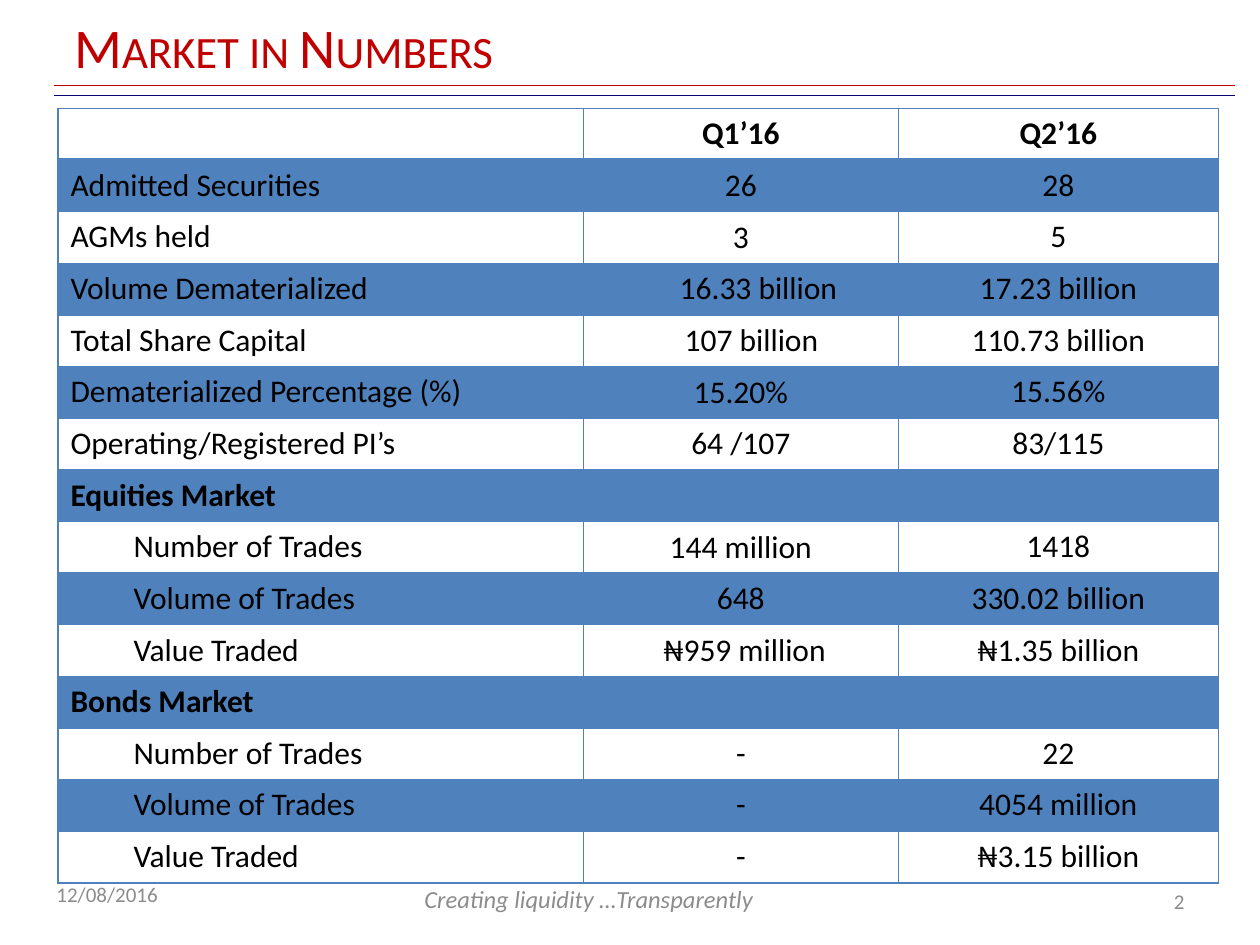
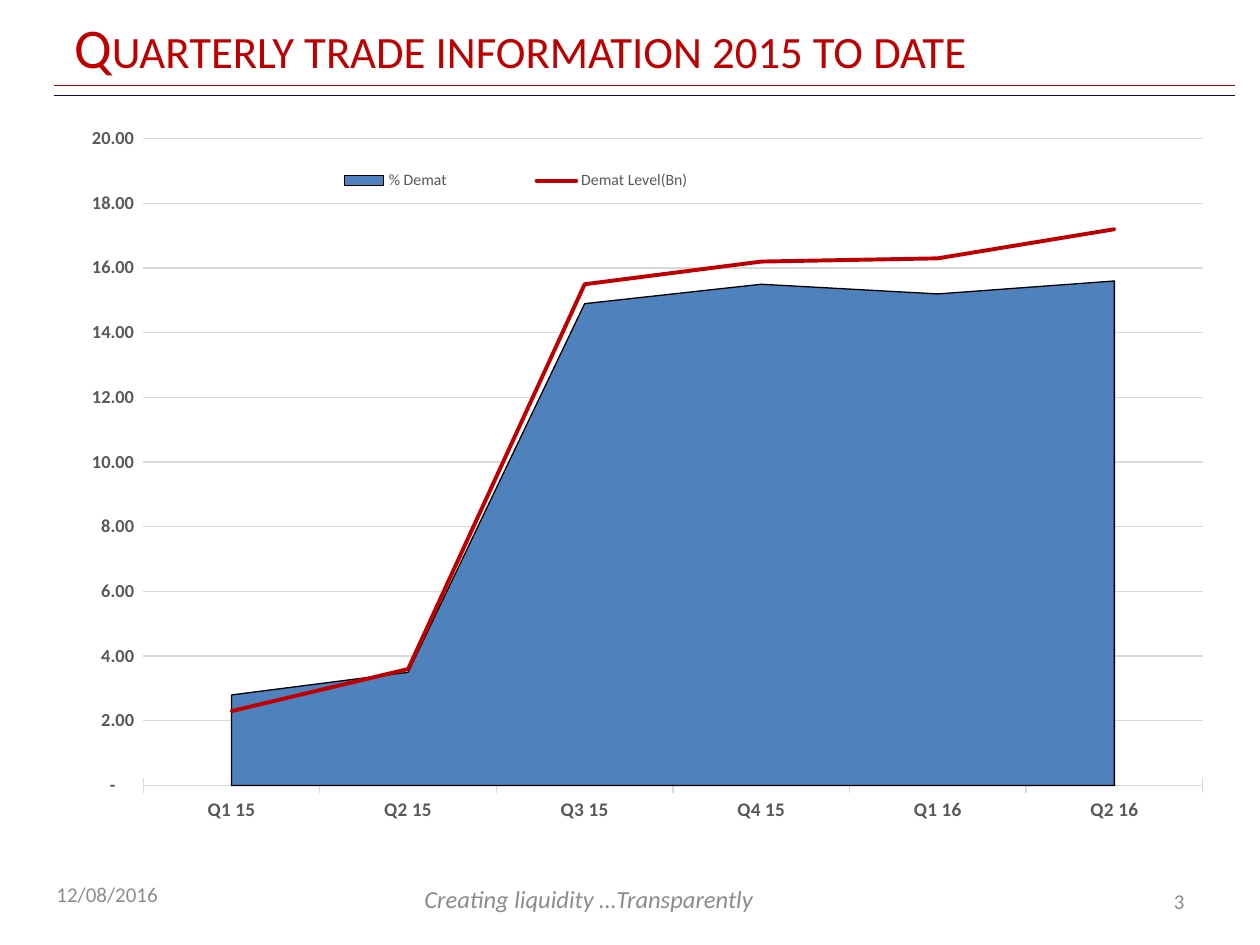
from lxml import etree
from pptx import Presentation
from pptx import util as u
from pptx.chart import data as chart_data
from pptx.dml import color
from pptx.enum import chart as chart_enum, shapes, text
from pptx.oxml import parse_xml
from pptx.oxml import ns

FONT = "Calibri"
COLORS = {
    "red": "C00000", "navy": "0A0571", "blue": "4F81BD", "black": "000000",
    "footer": "8C8C8C", "axis_text": "595959", "grid": "D9D9D9",
}
RULES = [(0.76, "navy"), (0.68, "red")]
TAGLINE = "Creating liquidity …Transparently"
DATE = "12/08/2016"

MARKET_TITLE = "Market in Numbers"
QUARTERS = ("", "Q1’16", "Q2’16")
ITEM, SECTION, DETAIL = "item", "section", "detail"
MARKET_ROWS = [
    (ITEM, "Admitted Securities", "26", "28"),
    (ITEM, "AGMs held", "3", "5"),
    (ITEM, "Volume Dematerialized", "16.33 billion", "17.23 billion"),
    (ITEM, "Total Share Capital", "107 billion", "110.73 billion"),
    (ITEM, "Dematerialized Percentage (%)", "15.20%", "15.56%"),
    (ITEM, "Operating/Registered PI’s", "64 /107", "83/115"),
    (SECTION, "Equities Market", "", ""),
    (DETAIL, "Number of Trades", "144 million", "1418"),
    (DETAIL, "Volume of Trades", "648", "330.02 billion"),
    (DETAIL, "Value Traded", "₦959 million", "₦1.35 billion"),
    (SECTION, "Bonds Market", "", ""),
    (DETAIL, "Number of Trades", "-", "22"),
    (DETAIL, "Volume of Trades", "-", "4054 million"),
    (DETAIL, "Value Traded", "-", "₦3.15 billion"),
]
COLUMN_WIDTHS = (4.17, 2.5, 2.54)
ROW_HEIGHT = 0.41
VALUE_OFFSETS = {"16.33 billion": 0.28, "107 billion": 0.17, "₦959 million": 0.06}

TRADE_TITLE = "Quarterly trade information 2015 to date"
TRADE_QUARTERS = ["Q1 15", "Q2 15", "Q3 15", "Q4 15", "Q1 16", "Q2 16"]
TRADE_SERIES = {
    "% Demat": (2.8, 3.5, 14.9, 15.5, 15.2, 15.6),
    "Demat Level(Bn)": (2.3, 3.6, 15.5, 16.2, 16.3, 17.2),
}
NUMBER_FORMAT = '_(* #,##0.00_);_(* \\(#,##0.00\\);_(* "-"??_);_(@_)'
PLOT_LAYOUT = {"x": 0.07, "y": 0.03, "w": 0.91, "h": 0.85}
LEGEND_LAYOUT = {"x": 0.17, "y": 0.06, "w": 0.44, "h": 0.05}


def rgb(name):
    return color.RGBColor.from_string(COLORS[name])


def style_font(font, size, color_name, bold=False, italic=False):
    font.name = FONT
    font.size = u.Pt(size)
    font.color.rgb = rgb(color_name)
    font.bold = bold
    font.italic = italic


def style_line(line, color_name, width):
    line.color.rgb = rgb(color_name)
    line.width = u.Pt(width)


def add_text(slide, box, content, size, color_name, italic=False,
             anchor=text.MSO_ANCHOR.MIDDLE, align=text.PP_ALIGN.LEFT):
    frame = slide.shapes.add_textbox(*map(u.Inches, box)).text_frame
    frame.word_wrap = True
    frame.vertical_anchor = anchor
    paragraph = frame.paragraphs[0]
    paragraph.alignment = align
    run = paragraph.add_run()
    run.text = content
    style_font(run.font, size, color_name, italic=italic)
    return run


def add_framed_slide(presentation, title, number):
    slide = presentation.slides.add_slide(presentation.slide_layouts[6])
    for top, color_name in RULES:
        rule = slide.shapes.add_connector(
            shapes.MSO_CONNECTOR.STRAIGHT,
            *map(u.Inches, (0.43, top, 9.8, top)))
        style_line(rule.line, color_name, 0.75)
        etree.SubElement(rule._element.spPr, ns.qn("a:effectLst"))
    add_text(slide, (3.27, 6.97, 3.17, 0.4), TAGLINE, 14, "footer",
             italic=True, anchor=text.MSO_ANCHOR.TOP)
    add_text(slide, (0.35, 6.9, 2.33, 0.4), DATE, 12, "footer")
    heading = add_text(slide, (0.49, 0.06, 7.96, 0.61), title, 32, "red")
    heading.font._element.set("cap", "small")
    add_text(slide, (7.17, 6.95, 2.33, 0.4), str(number), 12, "footer",
             align=text.PP_ALIGN.RIGHT)
    return slide


def add_border(cell, side, width):
    properties = cell._tc.get_or_add_tcPr()
    line = etree.SubElement(properties, ns.qn(f"a:ln{side}"), w=str(u.Pt(width)))
    fill = etree.SubElement(line, ns.qn("a:solidFill"))
    etree.SubElement(fill, ns.qn("a:srgbClr"), val=COLORS["blue"])


def fill_cell(cell, shaded):
    if not shaded:
        cell.fill.background()
        return
    cell.fill.solid()
    cell.fill.fore_color.rgb = rgb("blue")
    tint = cell._tc.tcPr.find(f".//{ns.qn('a:solidFill')}[last()]/..")
    tint = tint.find(f"{ns.qn('a:solidFill')}/{ns.qn('a:srgbClr')}")
    etree.SubElement(tint, ns.qn("a:alpha"), val="20000")


def write_cell(cell, kind, column, content):
    paragraph = cell.text_frame.paragraphs[0]
    if column:
        paragraph.alignment = text.PP_ALIGN.CENTER
    elif kind == DETAIL:
        paragraph._p.get_or_add_pPr().set("marL", str(u.Inches(0.5)))
    if column == 1 and kind in (ITEM, DETAIL) and content != "-":
        cell.vertical_anchor = text.MSO_ANCHOR.MIDDLE
        cell.margin_right = cell.margin_top = cell.margin_bottom = 0
        cell.margin_left = u.Inches(VALUE_OFFSETS.get(content, 0))
    if content:
        run = paragraph.add_run()
        run.text = content
        style_font(run.font, 18, "black", bold=kind in ("header", SECTION))


def add_market_table(slide):
    rows = [("header", *QUARTERS), *MARKET_ROWS]
    table = slide.shapes.add_table(
        len(rows), len(COLUMN_WIDTHS), u.Inches(0.46), u.Inches(0.86),
        u.Inches(sum(COLUMN_WIDTHS)), u.Inches(ROW_HEIGHT * len(rows))).table
    table.first_row = table.horz_banding = False
    for column, width in zip(table.columns, COLUMN_WIDTHS):
        column.width = u.Inches(width)
    for row_index, (kind, *contents) in enumerate(rows):
        table.rows[row_index].height = u.Inches(ROW_HEIGHT)
        for column_index, content in enumerate(contents):
            cell = table.cell(row_index, column_index)
            write_cell(cell, kind, column_index, content)
            for side in "LRTB":
                under_header = (row_index, side) in ((0, "B"), (1, "T"))
                add_border(cell, side, 2 if under_header else 1)
            fill_cell(cell, row_index % 2 == 1)


def manual_layout(values, inner=False):
    target = '<c:layoutTarget val="inner"/>' if inner else ""
    modes = "".join(f'<c:{axis}Mode val="edge"/>' for axis in "xy")
    places = "".join(f'<c:{key} val="{value}"/>' for key, value in values.items())
    return parse_xml(f'<c:layout {ns.nsdecls("c")}><c:manualLayout>'
                     f'{target}{modes}{places}</c:manualLayout></c:layout>')


def move_last_series_to_line(chart):
    area = chart._chartSpace.find(f".//{ns.qn('c:areaChart')}")
    series = area.findall(ns.qn("c:ser"))[-1]
    line = parse_xml(f'<c:lineChart {ns.nsdecls("c")}><c:grouping val="standard"/>'
                     '<c:varyColors val="0"/><c:marker val="1"/></c:lineChart>')
    line.insert(2, series)
    for axis_id in area.findall(ns.qn("c:axId")):
        etree.SubElement(line, ns.qn("c:axId"), val=axis_id.get("val"))
    area.addnext(line)


def style_axes(chart):
    categories, values = chart.category_axis, chart.value_axis
    categories.major_tick_mark = chart_enum.XL_TICK_MARK.CROSS
    categories.has_major_gridlines = False
    style_line(categories.format.line, "grid", 0.75)
    style_font(categories.tick_labels.font, 11, "axis_text", bold=True)
    values.minimum_scale, values.maximum_scale, values.major_unit = 0, 20, 2
    values.major_tick_mark = chart_enum.XL_TICK_MARK.NONE
    values.format.line.fill.background()
    values.has_major_gridlines = True
    style_line(values.major_gridlines.format.line, "grid", 0.75)
    style_font(values.tick_labels.font, 10.5, "axis_text", bold=True)
    values.tick_labels.number_format = NUMBER_FORMAT
    values.tick_labels.number_format_is_linked = False
    values._element.find(ns.qn("c:crossBetween")).set("val", "between")


def add_trade_chart(slide):
    data = chart_data.CategoryChartData(number_format="0.0")
    data.categories = TRADE_QUARTERS
    for name, values in TRADE_SERIES.items():
        data.add_series(name, values)
    chart = slide.shapes.add_chart(
        chart_enum.XL_CHART_TYPE.AREA,
        *map(u.Inches, (0.49, 0.92, 9.24, 6.04)), data).chart
    chart.has_title = False
    style_font(chart.font, 10, "black")
    chart.plots[0].vary_by_categories = False
    move_last_series_to_line(chart)
    style_axes(chart)

    demat_share = chart.plots[0].series[0]
    demat_share.format.fill.solid()
    demat_share.format.fill.fore_color.rgb = rgb("blue")
    style_line(demat_share.format.line, "black", 0.75)
    demat_level = chart.plots[1].series[0]
    style_line(demat_level.format.line, "red", 2.25)
    demat_level.format.line._ln.set("cap", "rnd")
    demat_level.marker.style = chart_enum.XL_MARKER_STYLE.NONE
    demat_level.smooth = False

    chart.has_legend = True
    legend = chart.legend
    legend.position = chart_enum.XL_LEGEND_POSITION.BOTTOM
    legend.include_in_layout = False
    style_font(legend.font, 9, "axis_text")
    for old in legend._element.findall(ns.qn("c:layout")):
        legend._element.remove(old)
    legend._element.find(ns.qn("c:legendPos")).addnext(manual_layout(LEGEND_LAYOUT))
    plot_area = chart._chartSpace.find(f".//{ns.qn('c:plotArea')}")
    for old in plot_area.findall(ns.qn("c:layout")):
        plot_area.remove(old)
    plot_area.insert(0, manual_layout(PLOT_LAYOUT, inner=True))


def main():
    presentation = Presentation()
    presentation.slide_width = u.Inches(10)
    presentation.slide_height = u.Inches(7.5)
    add_market_table(add_framed_slide(presentation, MARKET_TITLE, 2))
    add_trade_chart(add_framed_slide(presentation, TRADE_TITLE, 3))
    presentation.save("out.pptx")


if __name__ == "__main__":
    main()
